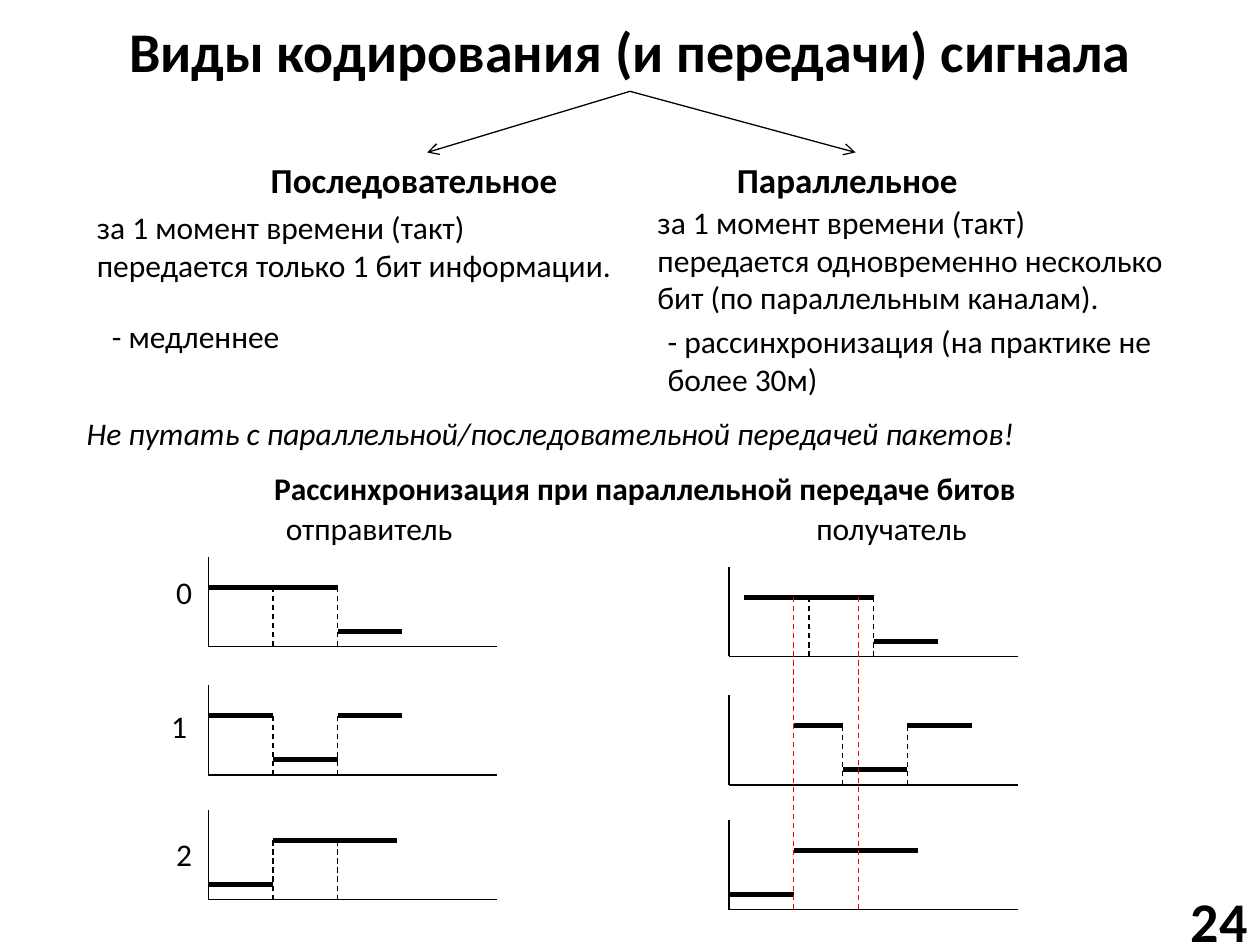
from lxml import etree
from pptx import Presentation
from pptx import util as u
from pptx.dml.color import RGBColor
from pptx.enum import dml, shapes, text
from pptx.oxml import ns

COLORS = {"ink": "000000", "skew": "FF0000"}
FONT = "Calibri"
COLUMNS, ROWS = 100, 75
STEP = 5.13
AXIS_WIDTH, AXIS_HEIGHT = 22.9, 7.1
LEVELS = {"high": 4.7, "low": 1.2}

HEADINGS = [("Последовательное", 20.5, 26.8), ("Параллельное", 57.5, 20.9)]
NOTES = [
    ("за 1 момент времени (такт) передается только 1 бит информации.", 6.7, 16, 7.1),
    ("за 1 момент времени (такт) передается одновременно несколько бит "
     "(по параллельным каналам).", 51.2, 15.6, 10.1),
    ("- медленнее", 7.9, 24.7, 4),
    ("- рассинхронизация (на практике не более 30м)", 52, 25.1, 7.1),
]
LABELS = [
    ("отправитель", 21.7, 39.9, 15.4),
    ("получатель", 63.8, 39.9, 14.1),
    ("0", 13, 45, 3.3),
    ("1", 12.6, 55.6, 3.3),
    ("2", 13, 65.8, 3.3),
]
BITS = [("high", "high", "low"), ("high", "low", "high"), ("low", "high", "high")]
EVEN = [(0, STEP), (STEP, 2 * STEP), (2 * STEP, 3 * STEP)]
SHORT = [(0, STEP), (STEP, 2 * STEP), (9.85, 14.98)]
DELAYED = [(start + 1.2, end + 1.2) for start, end in EVEN]
UNEVEN = [(STEP, 9), (9, 14.13), (14.13, 19.26)]
BASES = [51.3, 61.5, 71.4]
TICKS = (STEP, 2 * STEP)
SENDER = (16.54, 0, [EVEN, EVEN, SHORT], [TICKS, TICKS, TICKS])
RECEIVER = (57.87, 0.8, [DELAYED, UNEVEN, SHORT],
            [(6.33, 11.46), (9, 14.13), ()])


class Sketch:
    def __init__(self, deck):
        self.deck = deck
        self.page = deck.slides.add_slide(deck.slide_layouts[6])

    def x(self, columns):
        return round(self.deck.slide_width * columns / COLUMNS)

    def y(self, rows):
        return round(self.deck.slide_height * rows / ROWS)

    def words(self, wording, left, top, width, height=4, size=18, bold=False,
              italic=False, align="LEFT", anchor="TOP", wrap=True):
        box = self.page.shapes.add_textbox(
            self.x(left), self.y(top), self.x(width), self.y(height))
        frame = box.text_frame
        frame.text = wording
        frame.word_wrap = wrap
        frame.vertical_anchor = getattr(text.MSO_ANCHOR, anchor)
        para = frame.paragraphs[0]
        para.alignment = getattr(text.PP_ALIGN, align)
        font = para.runs[0].font
        font.name, font.size = FONT, u.Pt(size)
        font.bold, font.italic = bold, italic
        font.color.rgb = RGBColor.from_string(COLORS["ink"])

    def line(self, start, end, width=0.75, color="ink", dashed=False, arrow=False):
        link = self.page.shapes.add_connector(
            shapes.MSO_CONNECTOR.STRAIGHT, self.x(start[0]), self.y(start[1]),
            self.x(end[0]), self.y(end[1]))
        link.line.width = u.Pt(width)
        link.line.color.rgb = RGBColor.from_string(COLORS[color])
        if dashed:
            link.line.dash_style = dml.MSO_LINE.DASH
        properties = link._element.spPr
        if arrow:
            outline = properties.find(ns.qn("a:ln"))
            etree.SubElement(outline, ns.qn("a:tailEnd"), type="arrow")
        etree.SubElement(properties, ns.qn("a:effectLst"))

    def signal(self, left, base, levels, spans, ticks):
        self.line((left, base), (left, base - AXIS_HEIGHT))
        self.line((left, base), (left + AXIS_WIDTH, base))
        for level, (start, end) in zip(levels, spans):
            row = base - LEVELS[level]
            self.line((left + start, row), (left + end, row), width=3)
        for tick in ticks:
            self.line((left + tick, base - LEVELS["high"]), (left + tick, base),
                      dashed=True)


def main():
    deck = Presentation()
    deck.slide_width, deck.slide_height = u.Inches(10), u.Inches(7.5)
    sketch = Sketch(deck)

    sketch.words("Виды кодирования (и передачи) сигнала", 2.8, 0.5, 94.5, 6.9,
                 size=32, bold=True, align="CENTER", anchor="MIDDLE")
    sketch.words("24", 88.6, 71, 11.4, size=32, bold=True, align="RIGHT",
                 anchor="MIDDLE")
    for wording, left, width in HEADINGS:
        sketch.words(wording, left, 12.1, width, 4.4, size=20, bold=True)
    for column in (33.9, 67.9):
        sketch.line((50, 7.25), (column, 12.1), arrow=True)
    for wording, left, top, height in NOTES:
        sketch.words(wording, left, top, 43.7, height)
    sketch.words("Не путать с параллельной/последовательной передачей пакетов!",
                 5.9, 32.4, 87.4, italic=True)
    sketch.words("Рассинхронизация при параллельной передаче битов",
                 7.5, 36.7, 87.4, bold=True, align="CENTER")
    for wording, left, top, width in LABELS:
        sketch.words(wording, left, top, width, wrap=False)

    for left, drop, spans, ticks in (SENDER, RECEIVER):
        for base, levels, row_spans, row_ticks in zip(BASES, BITS, spans, ticks):
            sketch.signal(left, base + drop, levels, row_spans, row_ticks)

    left, drop = RECEIVER[:2]
    for tick in TICKS:
        sketch.line((left + tick, BASES[0] + drop - LEVELS["high"]),
                    (left + tick, BASES[-1] + drop), color="skew", dashed=True)

    deck.save("out.pptx")


if __name__ == "__main__":
    main()
